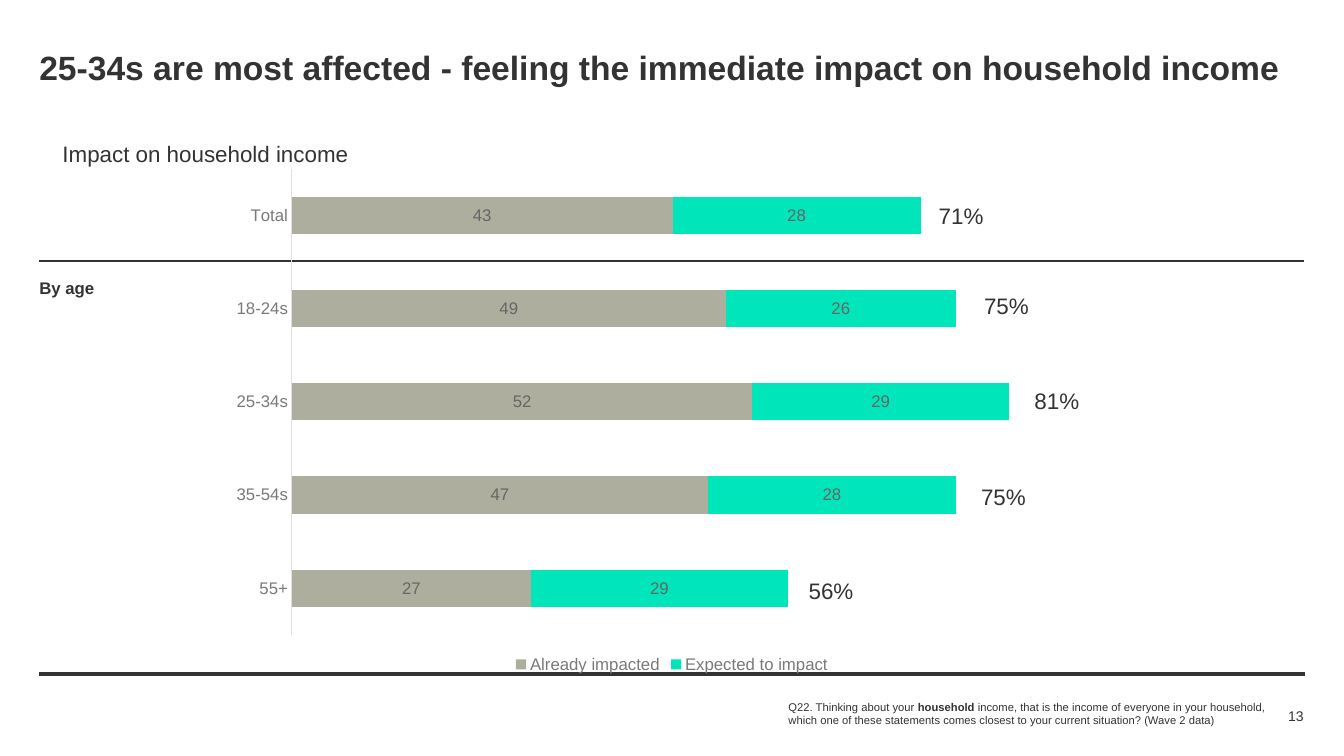
from typing import NamedTuple

from lxml import etree
from pptx import Presentation
from pptx import util as u
from pptx.chart.data import CategoryChartData
from pptx.dml.color import RGBColor
from pptx.enum import chart as ch
from pptx.enum import shapes, text
from pptx.oxml import parse_xml
from pptx.oxml.ns import nsdecls, qn

FONT = "Arial"
INK = "333333"
GREY = "7A7A7A"
LEFT = 0.39
PLOT = {"x": 0.076, "y": 0.149, "w": 0.889, "h": 0.78}


class Run(NamedTuple):
    words: str
    bold: bool = False


class Label(NamedTuple):
    x: float
    y: float
    w: float
    h: float
    runs: list[Run]
    size: float
    wrap: bool = True
    middle: bool = False
    right: bool = False


class Rule(NamedTuple):
    y: float
    end: float
    width: float


class Series(NamedTuple):
    name: str
    vals: list[int]
    fill: str


class Total(NamedTuple):
    x: float
    y: float
    words: str


AGES = ["55+", "35-54s", "25-34s", "18-24s", "Total"]
SERIES = [
    Series("Already impacted", [27, 47, 52, 49, 43], "AEAE9F"),
    Series("Expected to impact", [29, 28, 29, 26, 28], "00E5BA"),
]
RULES = [Rule(6.69, 12.94, 3), Rule(2.59, 12.93, 1)]
TOTALS = [
    Total(9.31, 2.01, "71%"),
    Total(9.76, 2.9, "75%"),
    Total(10.26, 3.84, "81%"),
    Total(9.73, 4.79, "75%"),
    Total(8.02, 5.73, "56%"),
]
TITLE = "25-34s are most affected - feeling the immediate impact on household income"
NOTE = [
    Run("Q22. Thinking about your "),
    Run("household", True),
    Run(" income, that is the income of everyone in your household, which one of "
        "these statements comes closest to your current situation? (Wave 2 data)"),
]
LABELS = [
    Label(LEFT, 0.47, 12.54, 0.44, [Run(TITLE, True)], 24),
    Label(7.82, 6.79, 4.78, 0.58, NOTE, 8, middle=True),
    Label(LEFT, 2.76, 1.24, 0.2, [Run("By age", True)], 12),
    Label(0.62, 1.39, 2.87, 0.27, [Run("Impact on household income")], 16, wrap=False),
    Label(11.87, 6.99, 1.06, 0.22, [Run("13")], 10, middle=True, right=True),
] + [Label(t.x, t.y, 0.45, 0.27, [Run(t.words)], 16, wrap=False) for t in TOTALS]


def color(code: str) -> RGBColor:
    return RGBColor.from_string(code)


def style(font, size: float, code: str, bold: bool = False) -> None:
    font.name = FONT
    font.size = u.Pt(size)
    font.bold = bold
    font.color.rgb = color(code)


def add_label(slide, item: Label) -> None:
    box = slide.shapes.add_textbox(*map(u.Inches, item[:4]))
    frame = box.text_frame
    frame.margin_left = frame.margin_right = 0
    frame.margin_top = frame.margin_bottom = 0
    frame.word_wrap = item.wrap
    if item.middle:
        frame.vertical_anchor = text.MSO_ANCHOR.MIDDLE
    para = frame.paragraphs[0]
    para.alignment = text.PP_ALIGN.RIGHT if item.right else text.PP_ALIGN.LEFT
    for part in item.runs:
        run = para.add_run()
        run.text = part.words
        style(run.font, item.size, INK, part.bold)


def add_rule(slide, rule: Rule) -> None:
    line = slide.shapes.add_connector(
        shapes.MSO_CONNECTOR.STRAIGHT,
        *map(u.Inches, (LEFT, rule.y, rule.end, rule.y)))
    line.line.color.rgb = color(INK)
    line.line.width = u.Pt(rule.width)
    etree.SubElement(line._element.spPr, qn("a:effectLst"))


def place_plot(chart) -> None:
    """Fix the inner plot area as fractions of the chart."""
    modes = "".join(f'<c:{k}Mode val="edge"/>' for k in "xy")
    sizes = "".join(f'<c:{k} val="{v}"/>' for k, v in PLOT.items())
    area = chart._chartSpace.chart.plotArea
    for old in area.findall(qn("c:layout")):
        area.remove(old)
    area.insert(0, parse_xml(
        f'<c:layout {nsdecls("c")}><c:manualLayout><c:layoutTarget val="inner"/>'
        f"{modes}{sizes}</c:manualLayout></c:layout>"))


def add_bars(slide) -> None:
    data = CategoryChartData()
    data.categories = AGES
    for item in SERIES:
        data.add_series(item.name, item.vals)
    chart = slide.shapes.add_chart(
        ch.XL_CHART_TYPE.BAR_STACKED,
        *map(u.Inches, (2.22, 0.79, 8.89, 5.93)), data).chart
    style(chart.font, 10, INK)
    chart.has_title = False
    place_plot(chart)

    chart.has_legend = True
    chart.legend.position = ch.XL_LEGEND_POSITION.BOTTOM
    chart.legend.include_in_layout = False
    style(chart.legend.font, 12, GREY)

    ages = chart.category_axis
    ages.major_tick_mark = ch.XL_TICK_MARK.NONE
    ages.format.line.color.rgb = color("E0E0E0")
    ages.format.line.width = u.Pt(0.75)
    style(ages.tick_labels.font, 12, GREY)
    scale = chart.value_axis
    scale.minimum_scale, scale.maximum_scale = 0, 90
    scale.has_major_gridlines = False
    scale.visible = False

    plot = chart.plots[0]
    plot.gap_width, plot.overlap = 150, 100
    plot.vary_by_categories = False
    for bars, item in zip(plot.series, SERIES):
        bars.format.fill.solid()
        bars.format.fill.fore_color.rgb = color(item.fill)
        bars.data_labels.show_value = True
        style(bars.data_labels.font, 12, "666666")


def main() -> None:
    deck = Presentation()
    deck.slide_width, deck.slide_height = u.Inches(13.33), u.Inches(7.5)
    slide = deck.slides.add_slide(deck.slide_layouts[6])
    for rule in RULES:
        add_rule(slide, rule)
    add_bars(slide)
    for item in LABELS:
        add_label(slide, item)
    deck.save("out.pptx")


if __name__ == "__main__":
    main()
